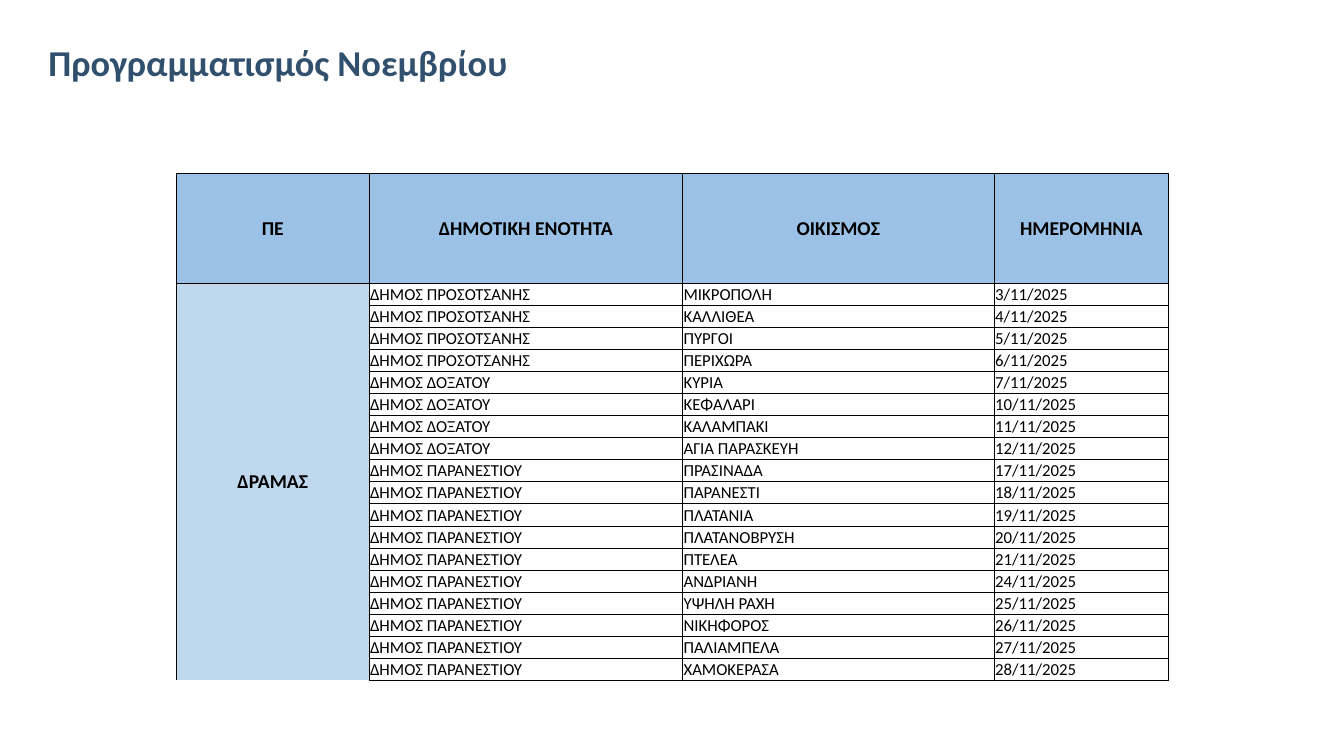
from dataclasses import dataclass

from lxml.etree import SubElement as Sub
from pptx import Presentation
from pptx.dml.color import RGBColor as Rgb
from pptx.enum.text import MSO_ANCHOR as Anchor, PP_ALIGN as Align
from pptx.oxml.ns import qn
from pptx.table import _Cell as Cell
from pptx.util import Inches, Pt

COLORS = {"title": "31506D", "head": "9BC2E6", "unit": "C0D8ED", "ink": "000000"}
FONT = "Calibri"
WIDTH, HEIGHT = Inches(13.33), Inches(7.5)

HEADS = ["ΠΕ", "ΔΗΜΟΤΙΚΗ ΕΝΟΤΗΤΑ", "ΟΙΚΙΣΜΟΣ", "ΗΜΕΡΟΜΗΝΙΑ"]
COLS = [14.33, 23.33, 23.18, 12.98]  # percent of slide width
HEAD, BODY = 14.53, 52.54  # percent of slide height


@dataclass
class Town:
    name: str
    day: int


@dataclass
class Area:
    name: str
    towns: list[Town]


@dataclass
class Style:
    size: int = 12
    bold: bool = False
    align: Align = Align.LEFT
    fill: str = ""
    sides: str = "LRTB"


AREAS = [
    Area("ΔΗΜΟΣ ΠΡΟΣΟΤΣΑΝΗΣ", [
        Town("ΜΙΚΡΟΠΟΛΗ", 3), Town("ΚΑΛΛΙΘΕΑ", 4),
        Town("ΠΥΡΓΟΙ", 5), Town("ΠΕΡΙΧΩΡΑ", 6),
    ]),
    Area("ΔΗΜΟΣ ΔΟΞΑΤΟΥ", [
        Town("ΚΥΡΙΑ", 7), Town("ΚΕΦΑΛΑΡΙ", 10),
        Town("ΚΑΛΑΜΠΑΚΙ", 11), Town("ΑΓΙΑ ΠΑΡΑΣΚΕΥΗ", 12),
    ]),
    Area("ΔΗΜΟΣ ΠΑΡΑΝΕΣΤΙΟΥ", [
        Town("ΠΡΑΣΙΝΑΔΑ", 17), Town("ΠΑΡΑΝΕΣΤΙ", 18),
        Town("ΠΛΑΤΑΝΙΑ", 19), Town("ΠΛΑΤΑΝΟΒΡΥΣΗ", 20),
        Town("ΠΤΕΛΕΑ", 21), Town("ΑΝΔΡΙΑΝΗ", 24),
        Town("ΥΨΗΛΗ ΡΑΧΗ", 25), Town("ΝΙΚΗΦΟΡΟΣ", 26),
        Town("ΠΑΛΙΑΜΠΕΛΑ", 27), Town("ΧΑΜΟΚΕΡΑΣΑ", 28),
    ]),
]

PLAIN = Style()
TOP = Style(14, True, Align.CENTER, "head")
UNIT = Style(14, True, Align.CENTER, "unit", "LRT")
INNER = Style(fill="unit", sides="LR")


def wide(share: float) -> int:
    """Percent of the slide width."""
    return round(WIDTH * share / 100)


def high(share: float) -> int:
    """Percent of the slide height."""
    return round(HEIGHT * share / 100)


def set_font(para, size: int, bold: bool, color: str) -> None:
    font = para.font
    font.name, font.size, font.bold = FONT, Pt(size), bold
    font.color.rgb = Rgb.from_string(COLORS[color])


def add_lines(cell: Cell, sides: str) -> None:
    props = cell._tc.get_or_add_tcPr()
    for side in "LRTB":
        line = Sub(props, qn(f"a:ln{side}"), w=str(Pt(0.5)))
        if side in sides:
            fill = Sub(line, qn("a:solidFill"))
            Sub(fill, qn("a:srgbClr"), val=COLORS["ink"])
        else:
            Sub(line, qn("a:noFill"))


def fill_cell(cell: Cell, text: str, style: Style) -> None:
    add_lines(cell, style.sides)
    if style.fill:
        cell.fill.solid()
        cell.fill.fore_color.rgb = Rgb.from_string(COLORS[style.fill])
    else:
        cell.fill.background()
    cell.margin_left = cell.margin_right = cell.margin_top = Inches(0.01)
    cell.margin_bottom = 0
    cell.vertical_anchor = Anchor.MIDDLE
    cell.text = text
    para = cell.text_frame.paragraphs[0]
    para.alignment = style.align
    set_font(para, style.size, style.bold, "ink")


def add_title(slide, text: str) -> None:
    box = slide.shapes.add_textbox(wide(2.7), high(3.33), wide(93), high(8.53))
    frame = box.text_frame
    frame.word_wrap = True
    frame.vertical_anchor = Anchor.BOTTOM
    frame.margin_left = Inches(0.12)
    para = frame.paragraphs[0]
    para.text = text
    para.line_spacing = 0.9
    set_font(para, 26, True, "title")


def add_plan(slide) -> None:
    rows = [(area.name, town.name, f"{town.day}/11/2025")
            for area in AREAS for town in area.towns]
    table = slide.shapes.add_table(
        len(rows) + 1, len(COLS), wide(13.13), high(22.93),
        wide(sum(COLS)), high(HEAD + BODY)).table
    table.first_row = table.horz_banding = False
    for col, share in zip(table.columns, COLS):
        col.width = wide(share)
    for row in table.rows:
        row.height = high(BODY / len(rows))
    table.rows[0].height = high(HEAD)

    for col, text in enumerate(HEADS):
        fill_cell(table.cell(0, col), text, TOP)
    for row, texts in enumerate(rows, 1):
        first = row == 1
        fill_cell(table.cell(row, 0), "ΔΡΑΜΑΣ" if first else "",
                  UNIT if first else INNER)
        for col, text in enumerate(texts, 1):
            fill_cell(table.cell(row, col), text, PLAIN)
    table.cell(1, 0).merge(table.cell(len(rows), 0))


def main() -> None:
    deck = Presentation()
    deck.slide_width, deck.slide_height = WIDTH, HEIGHT
    slide = deck.slides.add_slide(deck.slide_layouts[6])
    add_title(slide, "Προγραμματισμός Νοεμβρίου")
    add_plan(slide)
    deck.save("out.pptx")


if __name__ == "__main__":
    main()
